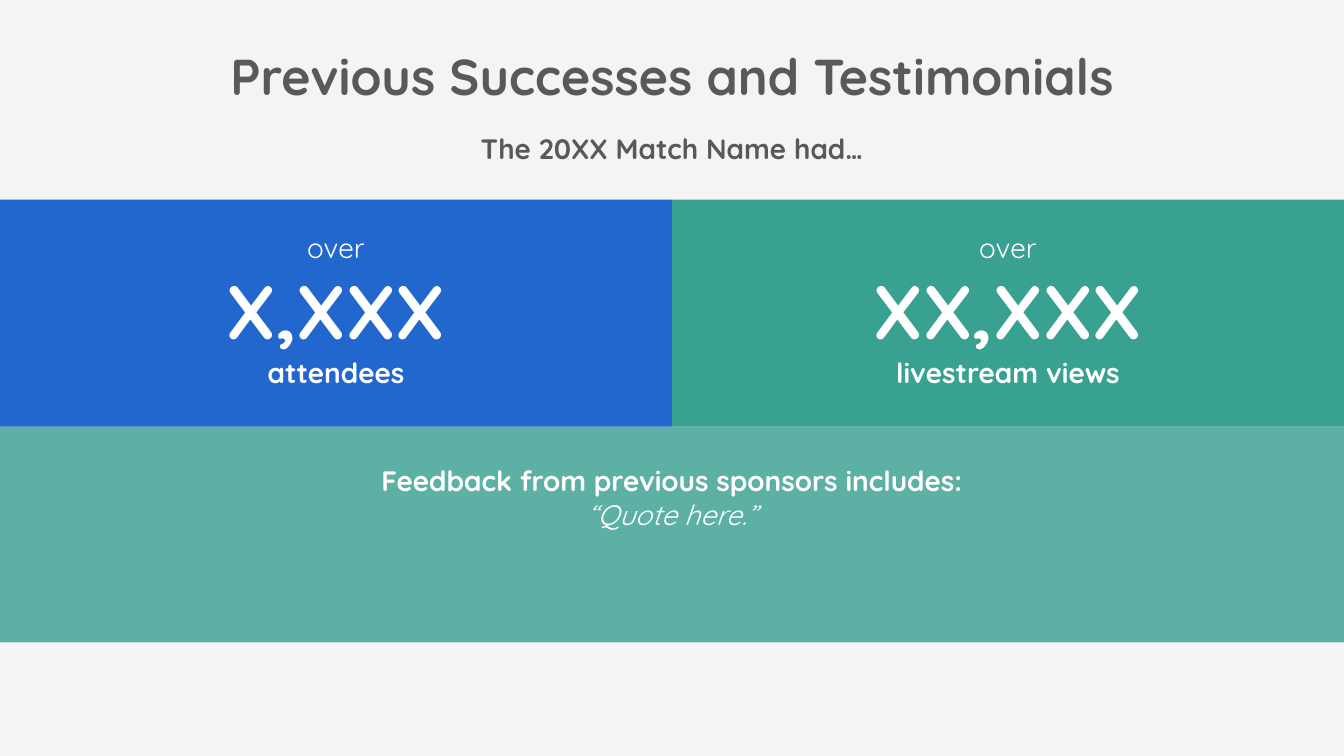
"""Build a slide of past event successes and sponsor testimonials."""
from dataclasses import dataclass

from lxml import etree
from pptx import Presentation
from pptx.dml.color import RGBColor
from pptx.enum.shapes import MSO_SHAPE
from pptx.enum.text import MSO_ANCHOR, MSO_AUTO_SIZE, PP_ALIGN
from pptx.oxml.ns import qn
from pptx.util import Pt

RECTANGLE = MSO_SHAPE.RECTANGLE
TOP = MSO_ANCHOR.TOP
NO_AUTOFIT = MSO_AUTO_SIZE.NONE
CENTER = PP_ALIGN.CENTER
TITLE_ONLY_LAYOUT = 5


@dataclass(frozen=True)
class Theme:
    font: str = "Quicksand"
    background: str = "F4F4F4"
    ink: str = "595959"
    light: str = "FFFFFF"
    blue: str = "2167CE"
    teal: str = "38A191"
    title_size: int = 36
    body_size: int = 20
    figure_size: int = 54


THEME = Theme()

TITLE = "Previous Successes and Testimonials"
LEAD_IN = "The 20XX Match Name had…"
STATISTICS = [
    ("over", "X,XXX", "attendees", THEME.blue),
    ("over", "XX,XXX", "livestream views", THEME.teal),
]
FEEDBACK_HEADING = "Feedback from previous sponsors includes:"
QUOTE = "“Quote here.”"

SLIDE_WIDTH, SLIDE_HEIGHT = 960, 540
PANEL_TOP, PANEL_HEIGHT = 142.6, 162.2
PANEL_WIDTH = SLIDE_WIDTH / len(STATISTICS)
FEEDBACK_TOP = PANEL_TOP + PANEL_HEIGHT
FEEDBACK_HEIGHT = 154
FEEDBACK_OPACITY = 80


def add_panel(slide, left, top, width, height, color, opacity=100):
    shape = slide.shapes.add_shape(RECTANGLE, Pt(left), Pt(top), Pt(width), Pt(height))
    shape.shadow.inherit = False
    shape.line.fill.background()
    shape.fill.solid()
    shape.fill.fore_color.rgb = RGBColor.from_string(color)
    if opacity < 100:
        color_element = shape.fill._xPr.find(".//" + qn("a:srgbClr"))
        etree.SubElement(color_element, qn("a:alpha"), val=str(opacity * 1000))


def prepare_frame(shape):
    frame = shape.text_frame
    frame.word_wrap = True
    frame.auto_size = NO_AUTOFIT
    frame.vertical_anchor = TOP
    return frame


def add_text_frame(slide, left, top, width, height):
    return prepare_frame(slide.shapes.add_textbox(Pt(left), Pt(top), Pt(width), Pt(height)))


def write_line(frame, text, size=THEME.body_size, color=THEME.light, bold=False, italic=False):
    paragraph = frame.paragraphs[0] if not frame.text else frame.add_paragraph()
    paragraph.alignment = CENTER
    run = paragraph.add_run()
    run.text = text
    run.font.name = THEME.font
    run.font.size = Pt(size)
    run.font.bold = bold
    run.font.italic = italic
    run.font.color.rgb = RGBColor.from_string(color)


def add_headings(slide):
    title = slide.shapes.title
    title.left, title.top, title.width, title.height = Pt(123), Pt(28.8), Pt(714), Pt(51)
    write_line(prepare_frame(title), TITLE, size=THEME.title_size, color=THEME.ink, bold=True)
    lead_in = add_text_frame(slide, 214.6, 90.7, 530.8, 31.5)
    write_line(lead_in, LEAD_IN, color=THEME.ink, bold=True)


def add_statistics(slide):
    for index, (qualifier, figure, label, color) in enumerate(STATISTICS):
        left = index * PANEL_WIDTH
        add_panel(slide, left, PANEL_TOP, PANEL_WIDTH, PANEL_HEIGHT, color)
        frame = add_text_frame(slide, left, 161.3, PANEL_WIDTH, 121)
        write_line(frame, qualifier)
        write_line(frame, figure, size=THEME.figure_size, bold=True)
        write_line(frame, label, bold=True)


def add_feedback(slide):
    add_panel(slide, 0, FEEDBACK_TOP, SLIDE_WIDTH, FEEDBACK_HEIGHT, THEME.teal, FEEDBACK_OPACITY)
    frame = add_text_frame(slide, 221.5, 327.6, 517, 55.5)
    write_line(frame, FEEDBACK_HEADING, bold=True)
    write_line(frame, QUOTE, italic=True)


def main():
    presentation = Presentation()
    presentation.slide_width, presentation.slide_height = Pt(SLIDE_WIDTH), Pt(SLIDE_HEIGHT)
    slide = presentation.slides.add_slide(presentation.slide_layouts[TITLE_ONLY_LAYOUT])
    slide.background.fill.solid()
    slide.background.fill.fore_color.rgb = RGBColor.from_string(THEME.background)
    add_headings(slide)
    add_feedback(slide)
    add_statistics(slide)
    presentation.save("out.pptx")


if __name__ == "__main__":
    main()
